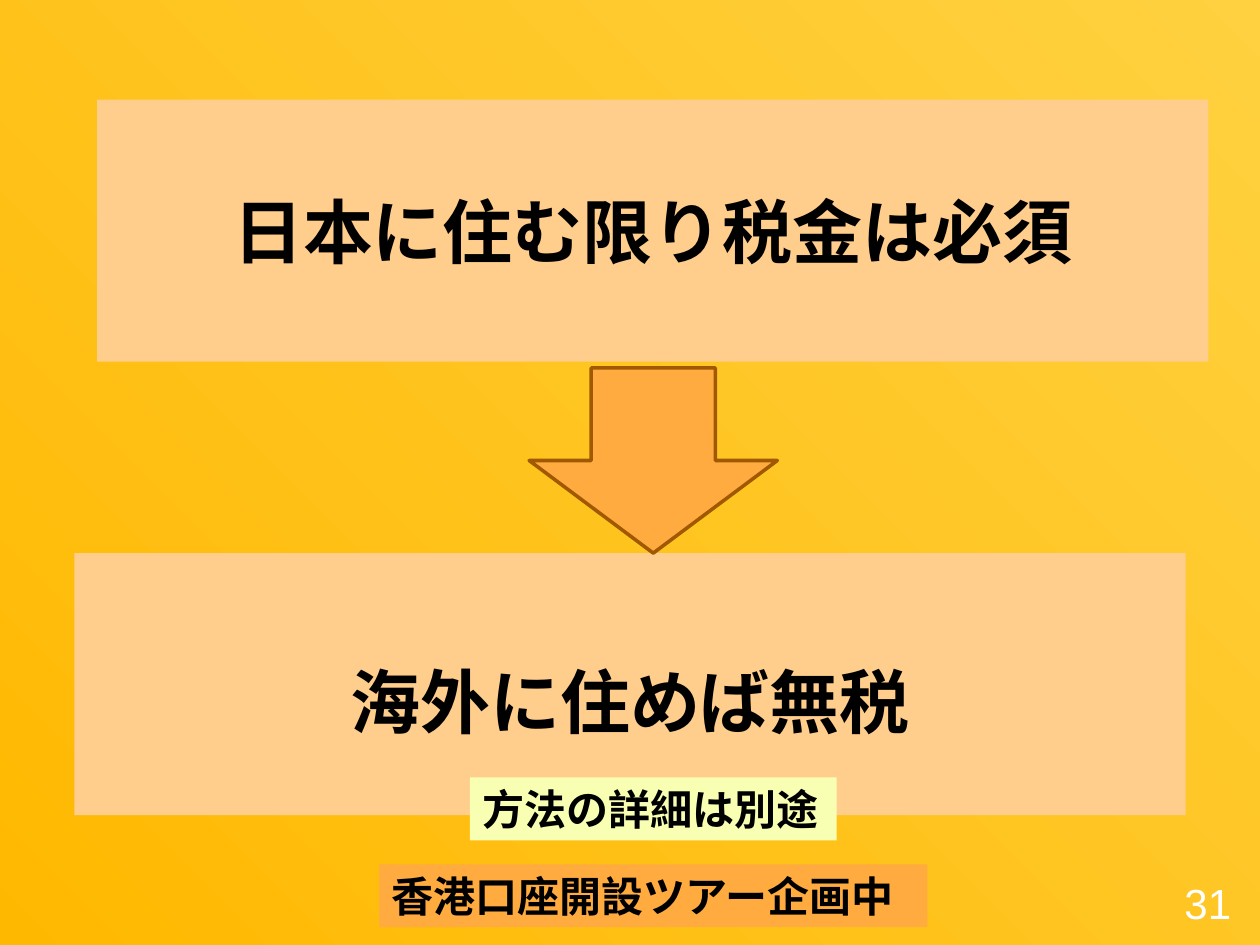
from lxml import etree
from pptx import Presentation
from pptx.dml.color import RGBColor
from pptx.enum.shapes import MSO_SHAPE
from pptx.enum.text import MSO_ANCHOR, PP_ALIGN
from pptx.oxml.ns import qn
from pptx.util import Inches, Pt

RECT, ARROW = MSO_SHAPE.RECTANGLE, MSO_SHAPE.DOWN_ARROW
LEFT, MID, RIGHT = PP_ALIGN.LEFT, PP_ALIGN.CENTER, PP_ALIGN.RIGHT
WIDE, HIGH = 10, 7.5
SANS, LATIN = "Noto Sans CJK JP", "Arial"
COLORS = {
    "light": "FFD140", "deep": "FFB800", "peach": "FFCD8C", "orange": "FFAB40",
    "brown": "A05900", "lemon": "F8FFB3", "black": "000000", "white": "FFFFFF",
}

BOX = (8.82, 2.08)
GAP = 1.52
TOP = 0.79
LOW = TOP + BOX[1] + GAP
ARROW_SIZE = (1.97, 1.47)

# text, left, top, size, fill, points, alignment, top inset
PANELS = [
    ("日本に住む限り税金は必須", 0.77, TOP, BOX, "peach", 40, MID, 0.05),
    ("海外に住めば無税", (WIDE - BOX[0]) / 2, LOW, BOX, "peach", 40, MID, 0.31),
]
NOTES = [
    ("方法の詳細は別途", 3.73, 6.17, (2.91, 0.5), "lemon", 24, LEFT, 0.05),
    ("香港口座開設ツアー企画中", 3.01, 6.86, (4.35, 0.5), "orange", 24, LEFT, 0.05),
]
PAGE = ("31", 9.27, 6.88, (0.6, 0.57))


def rgb(name):
    return RGBColor.from_string(COLORS[name])


def add_shape(slide, kind, left, top, size, fill=None, line=None, width=1):
    shape = slide.shapes.add_shape(kind, *map(Inches, (left, top, *size)))
    shape.shadow.inherit = False
    if fill:
        shape.fill.solid()
        shape.fill.fore_color.rgb = rgb(fill)
    if line:
        shape.line.color.rgb = rgb(line)
        shape.line.width = Pt(width)
    else:
        shape.line.fill.background()
    return shape


def write(shape, text, points, align, inset=0.05, face=SANS, color="black", bold=True):
    frame = shape.text_frame
    form = {
        "word_wrap": True, "vertical_anchor": MSO_ANCHOR.MIDDLE,
        "margin_left": Inches(0.1), "margin_right": Inches(0.1),
        "margin_top": Inches(inset), "margin_bottom": Inches(0.05),
    }
    for key, value in form.items():
        setattr(frame, key, value)
    para = frame.paragraphs[0]
    para.alignment = align
    run = para.add_run()
    run.text = text
    for key, value in {"size": Pt(points), "name": face, "bold": bold}.items():
        setattr(run.font, key, value)
    run.font.color.rgb = rgb(color)
    etree.SubElement(run.font._element, qn("a:ea")).set("typeface", face)


def add_ground(slide):
    """Lay the diagonal gradient a little past the slide's edges."""
    edge = 0.05
    ground = add_shape(slide, RECT, -edge, -edge, (WIDE + 2 * edge, HIGH + 2 * edge))
    ground.fill.gradient()
    ground.fill.gradient_angle = 225
    for stop, name in zip(ground.fill.gradient_stops, ("light", "deep")):
        stop.color.rgb = rgb(name)


def add_panels(slide, panels):
    for text, left, top, size, fill, points, align, inset in panels:
        shape = add_shape(slide, RECT, left, top, size, fill)
        write(shape, text, points, align, inset)


def main():
    deck = Presentation()
    deck.slide_width, deck.slide_height = Inches(WIDE), Inches(HIGH)
    slide = deck.slides.add_slide(deck.slide_layouts[6])

    add_ground(slide)
    text, left, top, size = PAGE
    page = slide.shapes.add_textbox(*map(Inches, (left, top, *size)))
    write(page, text, 24, RIGHT, face=LATIN, color="white", bold=False)

    add_panels(slide, PANELS)
    add_shape(slide, ARROW, 4.2, LOW - ARROW_SIZE[1], ARROW_SIZE, "orange", "brown", 2)
    add_panels(slide, NOTES)
    deck.save("out.pptx")


if __name__ == "__main__":
    main()
